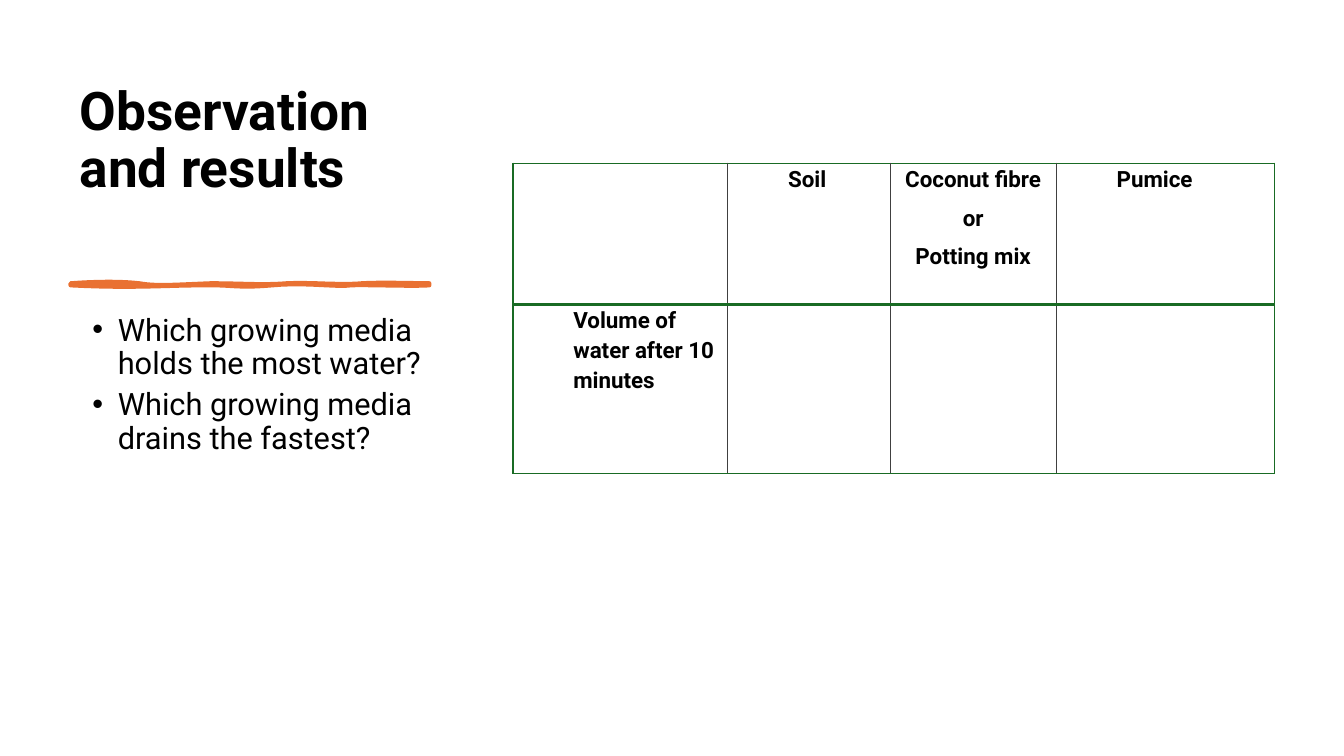
from dataclasses import dataclass

from lxml.etree import SubElement
from pptx import Presentation
from pptx.dml.color import RGBColor
from pptx.enum.text import MSO_ANCHOR, MSO_AUTO_SIZE, PP_ALIGN
from pptx.oxml import parse_xml
from pptx.oxml.ns import nsdecls, qn
from pptx.util import Cm, Pt


@dataclass(frozen=True)
class Theme:
    font: str = "Roboto"
    ink: str = "000000"
    paper: str = "FFFFFF"
    accent: str = "E97132"
    frame: str = "196B24"
    rule: str = "404040"
    title: int = 38
    body: int = 22
    cell: int = 16


THEME = Theme()

# Each curve: two control points and an end point, in cm from the stroke's left end
UPPER = [
    ((0.69, -0.05), (1.3, -0.05), (1.73, 0)),
    ((2.16, 0.08), (2.72, 0.03), (3.53, 0)),
    ((4.34, 0), (4.83, 0.05), (5.44, 0)),
    ((6.05, -0.03), (6.83, 0.05), (7.34, 0)),
    ((7.85, -0.03), (8.69, 0), (9.04, 0)),
]
LOWER = [
    ((8.59, 0.08), (7.47, 0.03), (7.06, 0.05)),
    ((6.65, 0.1), (5.94, -0.03), (5.08, 0.05)),
    ((4.19, 0.13), (4.09, 0.03), (3.28, 0.05)),
    ((2.44, 0.05), (1.57, 0.13), (0, 0.05)),
]

COLS = (5.41, 4.09, 4.19, 5.5)
ROWS = (3.56, 4.27)
CELLS = [
    [[], ["Soil"], ["Coconut fibre", "or", "Potting mix"], ["Pumice"]],
    [["Volume of water after 10 minutes"], [], [], []],
]
TASKS = ["Which growing media holds the most water?",
         "Which growing media drains the fastest?"]


def add_run(para, text, size, bold=False):
    run = para.add_run()
    run.text = text
    font = run.font
    font.name, font.size, font.bold = THEME.font, Pt(size), bold
    font.color.rgb = RGBColor.from_string(THEME.ink)


def add_paras(frame, texts):
    """Yield each text with its paragraph, starting with the frame's own."""
    for i, text in enumerate(texts):
        yield frame.add_paragraph() if i else frame.paragraphs[0], text


def set_title(slide, left, top, width, height):
    title = slide.shapes.title
    title.left, title.top, title.width, title.height = map(Cm, (left, top, width, height))
    frame = title.text_frame
    frame.auto_size, frame.word_wrap = MSO_AUTO_SIZE.NONE, True
    frame.vertical_anchor = MSO_ANCHOR.BOTTOM
    frame.margin_bottom = Cm(1.54)
    para = frame.paragraphs[0]
    para.alignment, para.line_spacing = PP_ALIGN.LEFT, 0.9
    add_run(para, "Observation and results", THEME.title, True)


def trace(start, curves, steps=12):
    """Return points along a chain of cubic curves."""
    points = []
    for one, two, end in curves:
        for step in range(1, steps + 1):
            t = step / steps
            u = 1 - t
            points.append(tuple(
                1000 * (u**3 * a + 3 * u * u * t * b + 3 * u * t * t * c + t**3 * d)
                for a, b, c, d in zip(start, one, two, end)))
        start = end
    return points


def add_brush(slide, left, top):
    form = slide.shapes.build_freeform(0, 0, scale=Cm(1) / 1000)
    form.add_line_segments(trace((0, 0), UPPER) + [(9040, 50)]
                           + trace((9.04, 0.05), LOWER), close=True)
    brush = form.convert_to_shape(Cm(left), Cm(top))
    brush.shadow.inherit = False
    color = RGBColor.from_string(THEME.accent)
    brush.fill.solid()
    brush.fill.fore_color.rgb = color
    brush.line.color.rgb = color
    brush.line.width = Pt(3)
    SubElement(brush.line._get_or_add_ln(), qn("a:round"))


def add_tasks(slide, left, top, width, height):
    box = slide.shapes.add_textbox(*map(Cm, (left, top, width, height)))
    frame = box.text_frame
    frame.word_wrap = True
    for para, text in add_paras(frame, TASKS):
        props = para._p.get_or_add_pPr()
        props.set("marL", str(Cm(0.97)))
        props.set("indent", str(Cm(-0.64)))
        SubElement(props, qn("a:buFont")).set("typeface", "Arial")
        SubElement(props, qn("a:buChar")).set("char", "•")
        para.line_spacing, para.space_after = 0.9, Pt(6)
        add_run(para, text, THEME.body)


def set_edge(cell, index, side, color, width):
    cell._tc.get_or_add_tcPr().insert(index, parse_xml(
        f'<a:ln{side} {nsdecls("a")} w="{Pt(width)}"><a:solidFill>'
        f'<a:srgbClr val="{color}"/></a:solidFill></a:ln{side}>'))


def fill_cell(cell, texts):
    cell.fill.solid()
    cell.fill.fore_color.rgb = RGBColor.from_string(THEME.paper)
    cell.margin_left = cell.margin_right = Cm(0.25)
    cell.margin_top = cell.margin_bottom = 0
    for para, text in add_paras(cell.text_frame, texts):
        para.line_spacing, para.space_after = 1.15, Pt(6)
        if len(texts) > 1:
            para.alignment = PP_ALIGN.CENTER
        else:
            para._p.get_or_add_pPr().set("marL", str(Cm(1.27)))
        add_run(para, text, THEME.cell, True)


def add_grid(slide, left, top):
    grid = slide.shapes.add_table(len(ROWS), len(COLS), Cm(left), Cm(top),
                                  Cm(sum(COLS)), Cm(sum(ROWS))).table
    grid.first_row = grid.horz_banding = False
    for col, width in zip(grid.columns, COLS):
        col.width = Cm(width)
    for row, height in zip(grid.rows, ROWS):
        row.height = Cm(height)
    outer, inner, middle = (THEME.frame, 1), (THEME.rule, 0.5), (THEME.frame, 2)
    for r, line in enumerate(CELLS):
        for c, texts in enumerate(line):
            cell = grid.cell(r, c)
            fill_cell(cell, texts)
            edges = {
                "L": inner if c else outer,
                "R": inner if c < len(COLS) - 1 else outer,
                "T": middle if r else outer,
                "B": middle if r < len(ROWS) - 1 else outer,
            }
            for i, (side, style) in enumerate(edges.items()):
                set_edge(cell, i, side, *style)


def main():
    deck = Presentation()
    deck.slide_width, deck.slide_height = Cm(33.87), Cm(19.05)
    slide = deck.slides.add_slide(deck.slide_layouts.get_by_name("Title Only"))
    set_title(slide, 1.75, 1.78, 9.53, 4.78)
    add_brush(slide, 1.78, 7.14)
    add_tasks(slide, 1.75, 7.8, 9.53, 9.47)
    add_grid(slide, 12.93, 4.11)
    deck.save("out.pptx")


if __name__ == "__main__":
    main()
